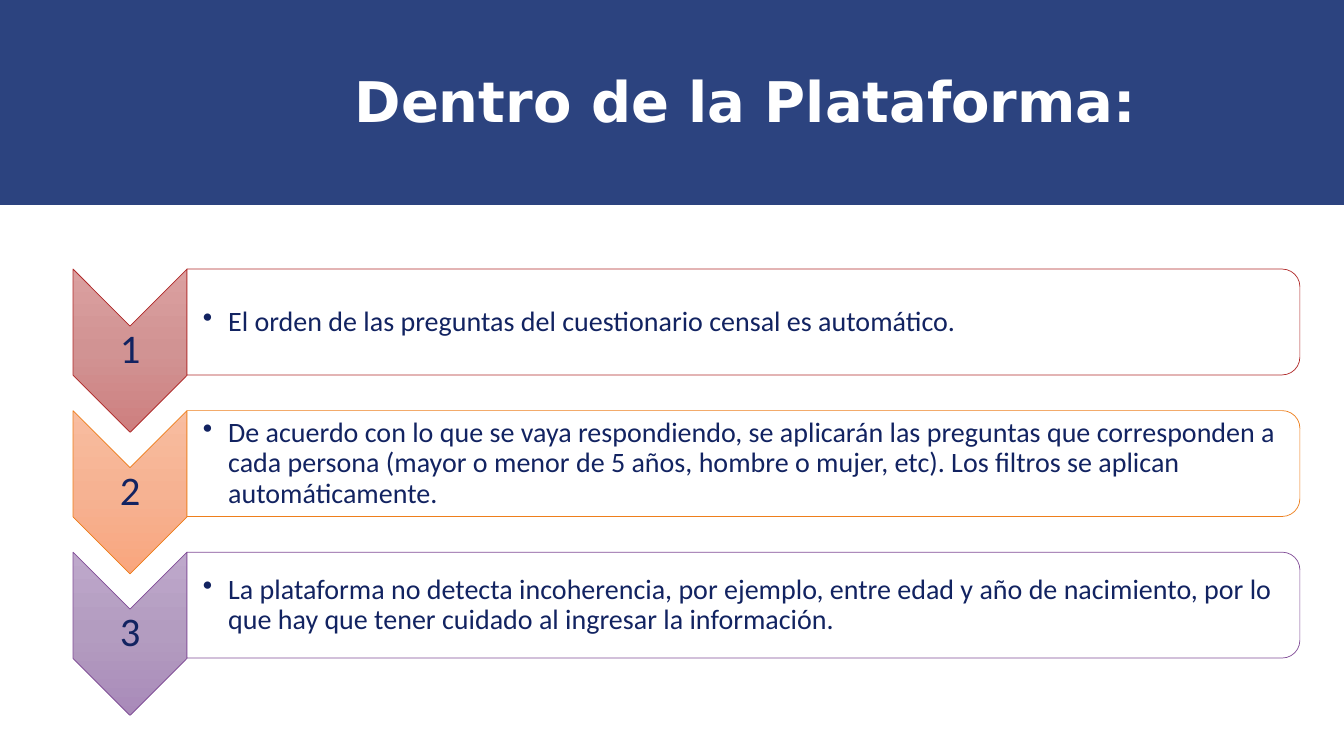
from lxml.etree import SubElement
from pptx import Presentation
from pptx.dml.color import RGBColor
from pptx.enum.shapes import MSO_SHAPE
from pptx.enum.text import MSO_ANCHOR, MSO_AUTO_SIZE, PP_ALIGN
from pptx.oxml import parse_xml
from pptx.oxml.ns import nsdecls, qn
from pptx.util import Pt

COLORS = {"banner": "2C437F", "white": "FFFFFF", "text": "122361"}

# Each step: line colour, gradient from top to bottom, text
STEPS = [
    ("B12B2B", ("DBA0A0", "D19393", "CE7F7F"),
     "El orden de las preguntas del cuestionario censal es automático."),
    ("EE7F1C", ("F8BDA0", "F6B292", "F9A67E"),
     "De acuerdo con lo que se vaya respondiendo, se aplicarán las preguntas que "
     "corresponden a cada persona (mayor o menor de 5 años, hombre o mujer, etc). "
     "Los filtros se aplican automáticamente."),
    ("824E98", ("BEA8CB", "B39CC0", "A98AB9"),
     "La plataforma no detecta incoherencia, por ejemplo, entre edad y año de "
     "nacimiento, por lo que hay que tener cuidado al ingresar la información."),
]

# Layout of the list, in points
FIRST_TOP, STEP_PITCH = 192.2, 101.1
CHEVRON_LEFT, CHEVRON_WIDTH, CHEVRON_HEIGHT = 52.2, 81.4, 116.6
PANEL_LEFT = CHEVRON_LEFT + CHEVRON_WIDTH
PANEL_WIDTH, PANEL_HEIGHT = 794.9, 75.6


def rgb(value):
    return RGBColor.from_string(value)


def write_text(box, text, size, color, font="Calibri", bold=False,
               align=PP_ALIGN.LEFT, insets=(0, 0, 0, 0), bullet=False):
    frame = box.text_frame
    frame.word_wrap = True
    frame.auto_size = MSO_AUTO_SIZE.NONE
    frame.vertical_anchor = MSO_ANCHOR.MIDDLE
    (frame.margin_left, frame.margin_top,
     frame.margin_right, frame.margin_bottom) = map(Pt, insets)
    para = frame.paragraphs[0]
    para.alignment = align
    para.line_spacing = 0.9
    if bullet:
        para.level = 1
        properties = para._p.get_or_add_pPr()
        properties.set("marL", str(Pt(18)))
        properties.set("indent", str(-Pt(18)))
        SubElement(properties, qn("a:buChar")).set("char", "•")
    span = para.add_run()
    span.text = text
    span.font.name = font
    span.font.size = Pt(size)
    span.font.bold = bold
    span.font.color.rgb = rgb(color)


def add_text_box(page, left, top, width, height, text, **text_format):
    box = page.shapes.add_textbox(Pt(left), Pt(top), Pt(width), Pt(height))
    write_text(box, text, **text_format)


def add_turned_shape(page, preset, left, top, width, height, line_color):
    """Add a shape turned by 90 degrees that fills the given visible frame."""
    shift = (width - height) / 2
    shape = page.shapes.add_shape(preset, Pt(left + shift), Pt(top - shift),
                                  Pt(height), Pt(width))
    shape.rotation = 90
    shape.shadow.inherit = False
    shape.line.color.rgb = rgb(line_color)
    shape.line.width = Pt(0.5)
    return shape


def fill_gradient(shape, colors):
    stops = "".join(
        f'<a:gs pos="{index * 50000}"><a:srgbClr val="{color}"/></a:gs>'
        for index, color in enumerate(colors))
    gradient = parse_xml(
        f'<a:gradFill {nsdecls("a")} rotWithShape="0"><a:gsLst>{stops}</a:gsLst>'
        '<a:lin ang="5400000" scaled="0"/></a:gradFill>')
    shape._element.spPr.find(qn("a:prstGeom")).addnext(gradient)


def fill_solid(shape, color, opacity=100):
    shape.fill.solid()
    shape.fill.fore_color.rgb = rgb(color)
    if opacity < 100:
        color_node = shape._element.spPr.find(qn("a:solidFill"))[0]
        SubElement(color_node, qn("a:alpha")).set("val", str(opacity * 1000))


def add_header(page, width, text):
    banner = page.shapes.add_shape(MSO_SHAPE.RECTANGLE, 0, 0, width, Pt(146.4))
    banner.shadow.inherit = False
    fill_solid(banner, COLORS["banner"])
    banner.line.fill.background()
    # The banner goes behind the title
    page.shapes._spTree.insert(2, banner._element)

    title = page.shapes.title
    title.left, title.top, title.width, title.height = map(
        Pt, (205.2, 41, 654.5, 67))
    write_text(title, text, size=40, color=COLORS["white"], font="DejaVu Sans",
               bold=True, align=PP_ALIGN.CENTER, insets=(0, 3.6, 0, 3.6))


def add_step(page, number, top, line_color, gradient, text):
    # Numbered chevron
    chevron = add_turned_shape(page, MSO_SHAPE.CHEVRON, CHEVRON_LEFT, top,
                               CHEVRON_WIDTH, CHEVRON_HEIGHT, line_color)
    fill_gradient(chevron, gradient)
    add_text_box(page, CHEVRON_LEFT, top + 41, CHEVRON_WIDTH, 34.6, str(number),
                 size=29, color=COLORS["text"], align=PP_ALIGN.CENTER,
                 insets=(1.4, 1.4, 1.4, 1.4))
    # Panel with the explanation
    panel = add_turned_shape(page, MSO_SHAPE.ROUND_2_SAME_RECTANGLE, PANEL_LEFT,
                             top, PANEL_WIDTH, PANEL_HEIGHT, line_color)
    fill_solid(panel, COLORS["white"], opacity=90)
    add_text_box(page, PANEL_LEFT, top + 3.7, PANEL_WIDTH - 3.7, 68.4, text,
                 size=20, color=COLORS["text"], insets=(11.4, 0.9, 0.9, 0.9),
                 bullet=True)


def main():
    deck = Presentation()
    deck.slide_width, deck.slide_height = Pt(960), Pt(540)
    page = deck.slides.add_slide(deck.slide_layouts.get_by_name("Title Only"))
    add_header(page, deck.slide_width, "Dentro de la Plataforma:")
    for index, step in enumerate(STEPS):
        add_step(page, index + 1, FIRST_TOP + index * STEP_PITCH, *step)
    deck.save("out.pptx")


if __name__ == "__main__":
    main()
